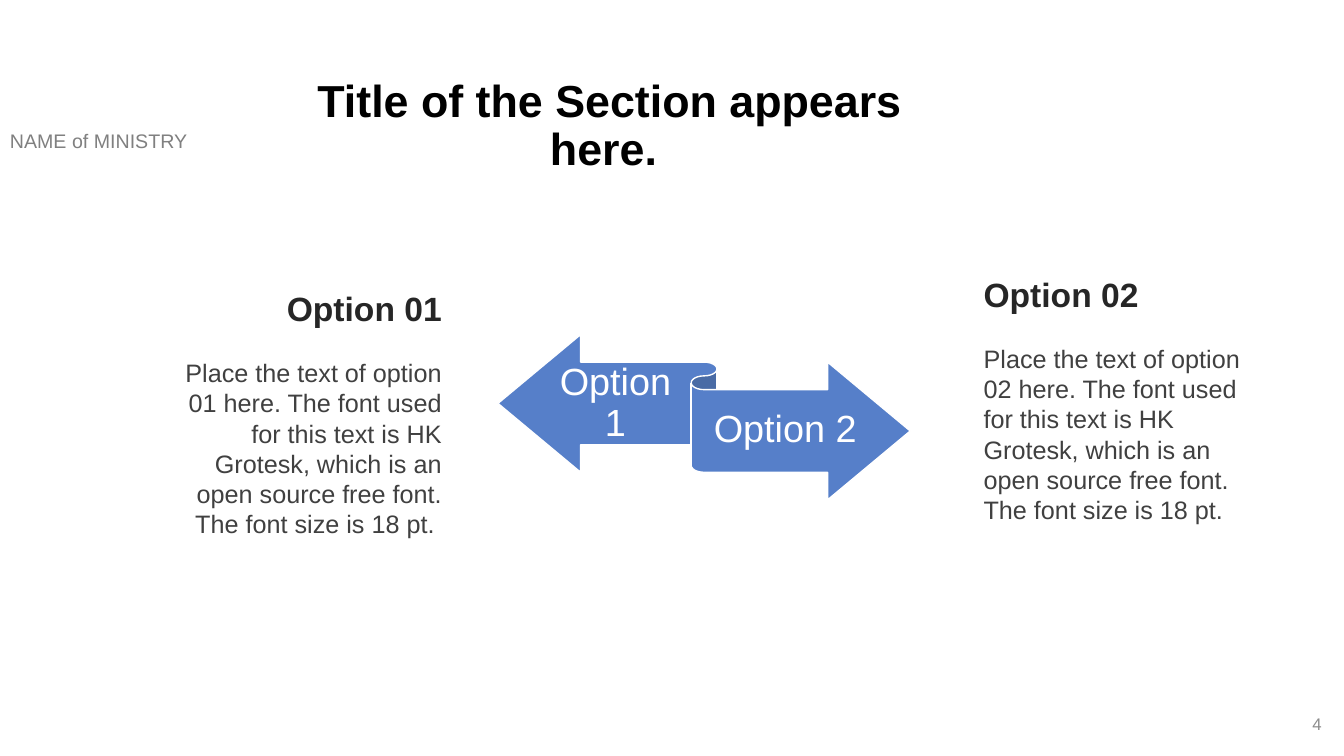
from lxml import etree
from pptx import Presentation
from pptx.dml.color import RGBColor
from pptx.enum.shapes import MSO_SHAPE
from pptx.enum.text import MSO_ANCHOR, MSO_AUTO_SIZE, PP_ALIGN
from pptx.oxml.ns import qn
from pptx.util import Pt

LEFT, MID, RIGHT = PP_ALIGN.LEFT, PP_ALIGN.CENTER, PP_ALIGN.RIGHT
TOP, CENTER = MSO_ANCHOR.TOP, MSO_ANCHOR.MIDDLE
RIBBON = MSO_SHAPE.LEFT_RIGHT_RIBBON
FIXED = MSO_AUTO_SIZE.NONE
FONT = "Arial"


def color(value):
    return RGBColor.from_string(value)


def style(para, size, tone, align=LEFT, bold=False):
    para.alignment = align
    font = para.font
    font.name, font.size, font.bold = FONT, Pt(size), bold
    font.color.rgb = color(tone)


def add_box(slide, x, y, w, h, anchor=TOP):
    box = slide.shapes.add_textbox(Pt(x), Pt(y), Pt(w), Pt(h))
    frame = box.text_frame
    frame.word_wrap = True
    frame.vertical_anchor = anchor
    return frame


def add_label(slide, text, place, size, tone, align=LEFT, anchor=TOP):
    frame = add_box(slide, *place, anchor)
    frame.text = text
    style(frame.paragraphs[0], size, tone, align)
    return frame


def set_title(slide, text, x, y, w, h):
    title = slide.shapes.title
    title.left, title.top, title.width, title.height = Pt(x), Pt(y), Pt(w), Pt(h)
    frame = title.text_frame
    frame.text = text
    frame.word_wrap = True
    frame.auto_size = FIXED
    frame.vertical_anchor = TOP
    para = frame.paragraphs[0]
    style(para, 32, "000000", MID, True)
    para.line_spacing = 0.9


def add_ribbon(slide, x, y, w, h):
    ribbon = slide.shapes.add_shape(RIBBON, Pt(x), Pt(y), Pt(w), Pt(h))
    ribbon.shadow.inherit = False
    ribbon.fill.solid()
    ribbon.fill.fore_color.rgb = color("4472C4")
    tint = ribbon.fill._xPr.find(qn("a:solidFill"))[0]
    etree.SubElement(tint, qn("a:alpha")).set("val", "90000")
    ribbon.line.color.rgb = color("FFFFFF")
    ribbon.line.width = Pt(1)


def add_arm(slide, text, *place):
    frame = add_label(slide, text, place, 27, "FFFFFF", MID, CENTER)
    frame.margin_left = frame.margin_right = 0
    frame.margin_top, frame.margin_bottom = Pt(7.2), Pt(7.9)
    frame.paragraphs[0].line_spacing = 0.9


def add_option(slide, head, body, place, align):
    frame = add_label(slide, head, place, 24, "262626", align)
    frame.paragraphs[0].font.bold = True
    para = frame.add_paragraph()
    para.text = body
    style(para, 18, "404040", align)
    para.space_before = Pt(20.7)


def main():
    deck = Presentation()
    deck.slide_width, deck.slide_height = Pt(960), Pt(540)
    slide = deck.slides.add_slide(deck.slide_layouts[5])
    set_title(slide, "Title of the Section appears here. ", 190.8, 52.6, 489.6, 77)
    add_label(slide, "NAME of MINISTRY", (0, 88.6, 208.8, 24.5), 14, "808080")
    add_ribbon(slide, 355.7, 239, 294.5, 118.1)
    add_arm(slide, "Option 1", 391, 259.9, 97.2, 57.6)
    add_arm(slide, "Option 2", 503.3, 278.6, 115.2, 57.6)
    body = ("Place the text of option {} here. The font used for this text is "
            "HK Grotesk, which is an open source free font. The font size is 18 pt.")
    options = [
        ("01", " ", (103, 202.3, 219.6, 211), RIGHT),
        ("02", "", (695.5, 192.2, 212.4, 211), LEFT),
    ]
    for number, tail, place, align in options:
        add_option(slide, f"Option {number}", body.format(number) + tail, place, align)
    add_label(slide, "4", (735.1, 502.6, 216, 28.8), 12, "8C8C8C", RIGHT, CENTER)
    deck.save("out.pptx")


if __name__ == "__main__":
    main()
